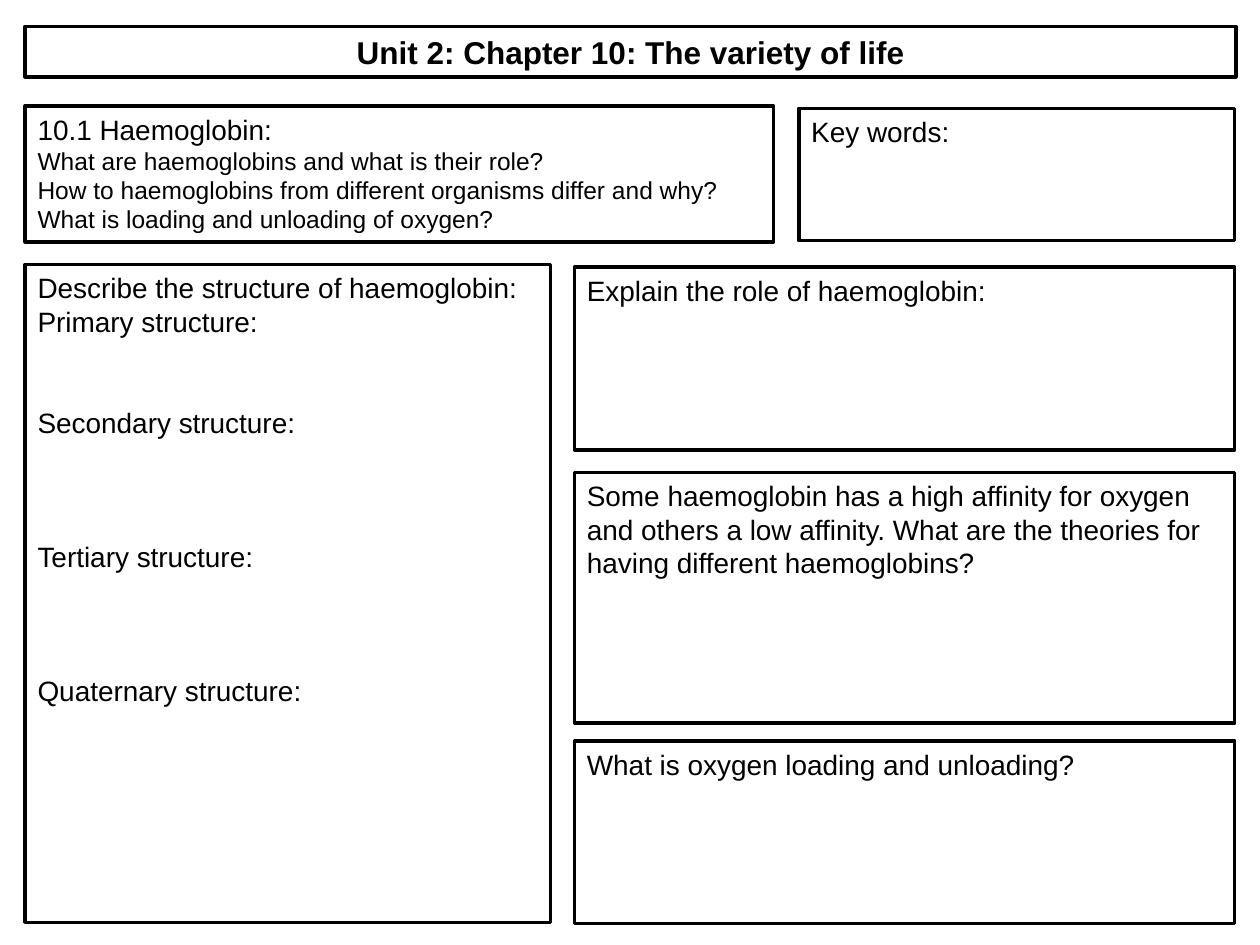
from dataclasses import dataclass

import pptx
import pptx.dml.color
import pptx.enum.shapes
import pptx.enum.text
import pptx.presentation
import pptx.slide
import pptx.util
from pptx.util import Inches


@dataclass(frozen=True)
class Theme:
    font: str = "Arial"
    ink: pptx.dml.color.RGBColor = pptx.dml.color.RGBColor(0, 0, 0)
    paper: pptx.dml.color.RGBColor = pptx.dml.color.RGBColor(255, 255, 255)
    border: float = 2
    title_size: int = 18
    body_size: int = 16
    question_size: int = 14
    line_height: float = 1.2


THEME = Theme()


@dataclass(frozen=True)
class Line:
    text: str
    size: int = THEME.body_size
    bold: bool = False
    centred: bool = False
    lines_skipped: int = 0


@dataclass(frozen=True)
class Box:
    left: float
    top: float
    width: float
    height: float
    lines: tuple[Line, ...]


MARGIN = 0.2
RIGHT_LEFT = 4.56
RIGHT_WIDTH = 5.24

BOXES = (
    Box(MARGIN, 0.21, 9.61, 0.4, (
        Line("Unit 2: Chapter 10: The variety of life", THEME.title_size, bold=True, centred=True),
    )),
    Box(MARGIN, 0.84, 5.94, 1.08, (
        Line("10.1 Haemoglobin:"),
        Line("What are haemoglobins and what is their role?", THEME.question_size),
        Line("How to haemoglobins from different organisms differ and why?", THEME.question_size),
        Line("What is loading and unloading of oxygen?", THEME.question_size),
    )),
    Box(6.34, 0.86, 3.46, 1.05, (Line("Key words:"),)),
    Box(MARGIN, 2.1, 4.17, 5.22, (
        Line("Describe the structure of haemoglobin:"),
        Line("Primary structure:"),
        Line("Secondary structure:", lines_skipped=2),
        Line("Tertiary structure:", lines_skipped=3),
        Line("Quaternary structure:", lines_skipped=3),
    )),
    Box(RIGHT_LEFT, 2.12, RIGHT_WIDTH, 1.45, (Line("Explain the role of haemoglobin:"),)),
    Box(RIGHT_LEFT, 3.75, RIGHT_WIDTH, 1.99, (
        Line("Some haemoglobin has a high affinity for oxygen and others a low affinity. "
             "What are the theories for having different haemoglobins?"),
    )),
    Box(RIGHT_LEFT, 5.88, RIGHT_WIDTH, 1.45, (Line("What is oxygen loading and unloading?"),)),
)


def write_lines(text_frame, lines: tuple[Line, ...]) -> None:
    text_frame.text = "\n".join(line.text for line in lines)
    for paragraph, line in zip(text_frame.paragraphs, lines):
        alignment = pptx.enum.text.PP_ALIGN
        paragraph.alignment = alignment.CENTER if line.centred else alignment.LEFT
        spacing = line.size * THEME.line_height
        paragraph.line_spacing = pptx.util.Pt(spacing)
        paragraph.space_before = pptx.util.Pt(spacing * line.lines_skipped)
        for run in paragraph.runs:
            run.font.name = THEME.font
            run.font.size = pptx.util.Pt(line.size)
            run.font.bold = line.bold
            run.font.color.rgb = THEME.ink


def draw_box(slide: pptx.slide.Slide, box: Box) -> None:
    shape = slide.shapes.add_shape(
        pptx.enum.shapes.MSO_SHAPE.RECTANGLE,
        Inches(box.left), Inches(box.top), Inches(box.width), Inches(box.height),
    )
    shape.shadow.inherit = False
    shape.fill.solid()
    shape.fill.fore_color.rgb = THEME.paper
    shape.line.color.rgb = THEME.ink
    shape.line.width = pptx.util.Pt(THEME.border)
    text_frame = shape.text_frame
    text_frame.word_wrap = True
    text_frame.vertical_anchor = pptx.enum.text.MSO_ANCHOR.TOP
    write_lines(text_frame, box.lines)


def main() -> None:
    presentation = pptx.Presentation()
    presentation.slide_width = Inches(10)
    presentation.slide_height = Inches(7.5)
    slide = presentation.slides.add_slide(presentation.slide_layouts[6])
    for box in BOXES:
        draw_box(slide, box)
    presentation.save("out.pptx")


if __name__ == "__main__":
    main()
